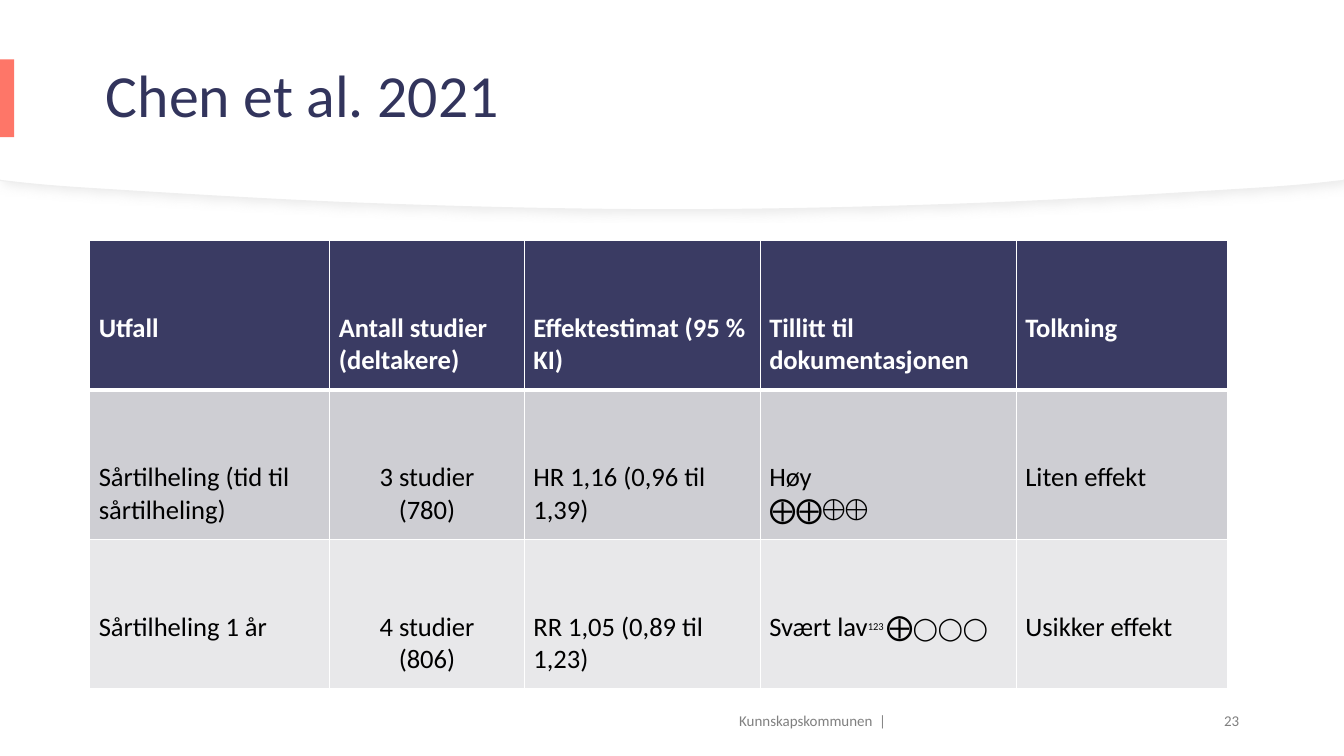
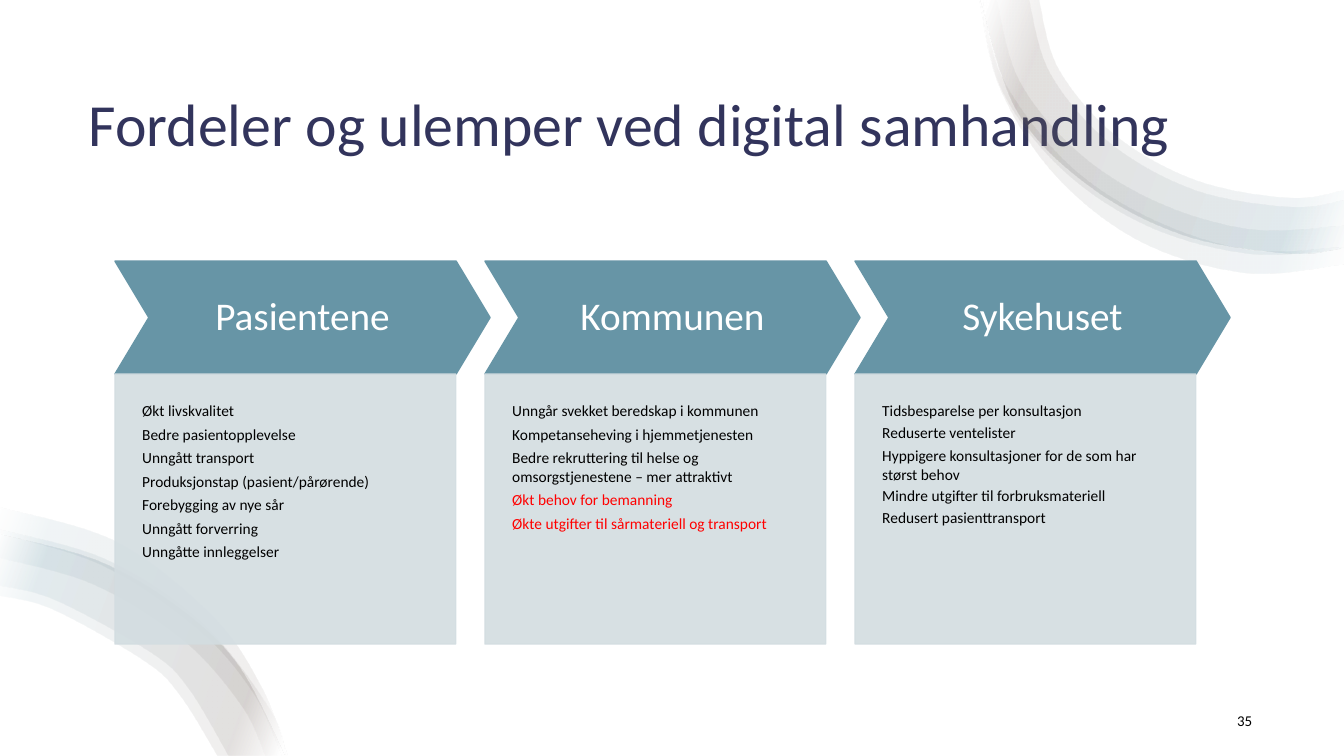
from dataclasses import dataclass
from lxml import etree
from pptx import Presentation
from pptx.dml.color import RGBColor
from pptx.enum.shapes import MSO_SHAPE as SHAPE
from pptx.enum.text import MSO_ANCHOR as ANCHOR, PP_ALIGN as ALIGN
from pptx.oxml import parse_xml
from pptx.oxml.ns import nsdecls, qn
from pptx.util import Inches, Pt


@dataclass(frozen=True)
class Theme:
    font: str = "Calibri"
    symbol_font: str = "Cambria"
    title: str = "32345C"
    accent: str = "FE7668"
    white: str = "FFFFFF"
    black: str = "000000"
    red: str = "FF0000"
    footer: str = "808080"
    wave_line: str = "EFEFEF"
    wave_shadow: str = "D9D9D9"
    header: str = "3A3B63"
    rows: tuple = ("CECED3", "E8E8EA")
    teal: str = "6795A6"
    panel: str = "D3DDE1"
    brown: str = "6C5D56"
    title_pt: float = 42.7
    heading_pt: float = 28
    table_pt: float = 19
    note_pt: float = 13
    circle_pt: float = 16
    body_pt: float = 11
    footer_pt: float = 10.7


T = Theme()
W, H = 13.33, 7.5


# ---- Shared helpers ----
def rgb(code):
    return RGBColor.from_string(code)


def write(box, paras, size, color=T.black, bold=False, align=ALIGN.LEFT,
          anchor=ANCHOR.TOP, ins=(0, 0, 0, 0), spacing=None, after=0):
    """Fill a text frame or cell; a paragraph is a string or a list of (text, overrides)."""
    tf = getattr(box, "text_frame", box)
    box.margin_left, box.margin_top, box.margin_right, box.margin_bottom = map(Inches, ins)
    box.vertical_anchor = anchor
    tf.word_wrap = True
    for i, para in enumerate(paras):
        p = tf.paragraphs[0] if i == 0 else tf.add_paragraph()
        p.alignment = align
        p.space_before, p.space_after = Pt(0), Pt(after)
        if spacing:
            p.line_spacing = spacing
        for text, fmt in [(para, {})] if isinstance(para, str) else para:
            r = p.add_run()
            r.text = text
            r.font.name = fmt.get("font", T.font)
            r.font.size = Pt(fmt.get("size", size))
            r.font.bold = bold
            r.font.color.rgb = rgb(fmt.get("color", color))
            if "spacing" in fmt:
                p.line_spacing = fmt["spacing"]
            if "raised" in fmt:
                r.font._element.set("baseline", str(fmt["raised"] * 1000))


def add_text(s, box, text, size, **fmt):
    tb = s.shapes.add_textbox(*map(Inches, box))
    write(tb.text_frame, [text], size, anchor=ANCHOR.MIDDLE, **fmt)


def paint(sp, fill, line=None, width=1):
    sp.shadow.inherit = False
    sp.fill.solid()
    sp.fill.fore_color.rgb = rgb(fill)
    if line:
        sp.line.color.rgb = rgb(line)
        sp.line.width = Pt(width)
    else:
        sp.line.fill.background()


def add_block(s, kind, box, fill, line=None):
    sp = s.shapes.add_shape(kind, *map(Inches, box))
    paint(sp, fill, line)
    return sp


def add_title(s, box, text, ins):
    add_text(s, box, text, T.title_pt, color=T.title, spacing=0.9, ins=ins)


def add_number(s, text, color, side):
    add_text(s, (9.42, 6.95, 3, 0.4), text, T.footer_pt, color=color,
             align=ALIGN.RIGHT, ins=(side, 0.05, side, 0.05))


def bezier_controls(pts):
    """Control point pairs of a smooth curve through pts (Catmull-Rom)."""
    padded = [pts[0], *pts, pts[-1]]
    return [([q + (r - p) / 6 for p, q, r in zip(a, b, c)],
             [r - (u - q) / 6 for q, r, u in zip(b, c, d)])
            for a, b, c, d in zip(padded, padded[1:], padded[2:], padded[3:])]


def add_outline(s, *edges):
    """Closed outline of smooth edges, joined by straight lines."""
    corners = [(Inches(x), Inches(y)) for edge in edges for x, y in edge]
    builder = s.shapes.build_freeform(*corners[0], scale=1.0)
    builder.add_line_segments(corners[1:], close=True)
    sp = builder.convert_to_shape()
    controls = []
    for edge in edges:
        controls += bezier_controls(edge) + [()]
    for segment, pair in zip(list(sp._element.iter(qn("a:lnTo"))), controls):
        if pair:
            segment.tag = qn("a:cubicBezTo")
        for i, (x, y) in enumerate(pair):
            pt = etree.Element(qn("a:pt"), x=str(Inches(x) - sp.left), y=str(Inches(y) - sp.top))
            segment.insert(i, pt)
    return sp


# ---- Table slide ----
def add_wave(s):
    left = [(0, 1.79), (0.91, 1.87), (3.69, 2.02)]
    edge = left + [(W / 2, 2.08)] + [(W - x, y) for x, y in reversed(left)]
    for lift, line in ((0, T.wave_line), (0.01, None)):
        sp = add_outline(s, [(W, 0), (0, 0)], [(x, y - lift) for x, y in edge])
        paint(sp, T.white, line, 0.75)
        if line:
            effects = sp._element.spPr.find(qn("a:effectLst"))
            effects.append(parse_xml(
                f'<a:outerShdw {nsdecls("a")} blurRad="{Pt(7)}" dist="{Pt(3)}" '
                f'dir="2700000" rotWithShape="0"><a:srgbClr val="{T.wave_shadow}">'
                '<a:alpha val="50000"/></a:srgbClr></a:outerShdw>'))


def set_borders(cell, **widths):
    tcPr = cell._tc.get_or_add_tcPr()
    for side in "LRTB":
        tcPr.append(parse_xml(
            f'<a:ln{side} {nsdecls("a")} w="{Pt(widths.get(side, 0.75))}"><a:solidFill>'
            f'<a:srgbClr val="{T.white}"/></a:solidFill></a:ln{side}>'))


def add_results(s, box, widths, rows):
    table = s.shapes.add_table(len(rows), len(widths), *map(Inches, box)).table
    for col, width in zip(table.columns, widths):
        col.width = Inches(width)
    for i, row in enumerate(rows):
        table.rows[i].height = Inches(box[3] / len(rows))
        for j, paras in enumerate(row):
            cell = table.cell(i, j)
            head = i == 0
            set_borders(cell, **({"B": 3} if head else {"T": 3} if i == 1 else {}))
            cell.fill.solid()
            cell.fill.fore_color.rgb = rgb(T.header if head else T.rows[i - 1])
            write(cell, paras, T.table_pt, color=T.white if head else T.black, bold=head,
                  align=ALIGN.CENTER if j == 1 and not head else ALIGN.LEFT,
                  ins=(0.09, 0.71, 0.09, 0.05))


RESULTS = [
    [["Utfall"], ["Antall studier (deltakere)"], ["Effektestimat (95 % KI)"],
     ["Tillitt til dokumentasjonen"], ["Tolkning"]],
    [["Sårtilheling (tid til sårtilheling)"], ["3 studier", "(780)"],
     ["HR 1,16 (0,96 til 1,39)"],
     ["Høy", [("⨁⨁", {}), ("⨁⨁", {"font": T.symbol_font})]],
     ["Liten effekt"]],
    [["Sårtilheling 1 år"], ["4 studier", "(806)"], ["RR 1,05 (0,89 til 1,23)"],
     [[("Svært lav", {}), ("123 ", {"size": T.note_pt, "raised": 30}),
       ("⨁", {}), ("◯◯◯", {"size": T.circle_pt})]],
     ["Usikker effekt"]],
]


def table_slide(s):
    ins = (0.13, 0.07, 0.13, 0.07)
    add_wave(s)
    add_title(s, (0.92, 0.28, 11.5, 1.39), "Chen et al. 2021", ins)
    add_block(s, SHAPE.RECTANGLE, (0, 0.59, 0.14, 0.77), T.accent)
    add_text(s, (4.42, 6.95, 4.5, 0.4), "Kunnskapskommunen  |", T.footer_pt,
             color=T.footer, align=ALIGN.RIGHT, ins=ins)
    add_number(s, "23", T.footer, 0.13)
    add_results(s, (0.89, 2.39, 11.27, 4.44), (2.38, 1.93, 2.34, 2.54, 2.09), RESULTS)


# ---- Column slide ----
TOP_EDGE = [(9.73, 0), (10.09, 1.1), (10.8, 1.84), (11.74, 2.33), (12.79, 2.51), (W, 2.45)]
LOW_EDGE = [(0, 5.3), (0.96, 5.56), (1.73, 6), (2.35, 6.59), (2.82, H)]
# Each ring: gradient angle, then (outer edge, inner edge) of its bands
RINGS = [
    (20, [
        (TOP_EDGE, [(10.31, 0), (10.5, 0.68), (11.06, 1.34), (11.87, 1.79),
                    (12.79, 1.96), (W, 1.88)]),
        (TOP_EDGE, [(10.21, 0), (10.42, 0.73), (11, 1.41), (11.84, 1.88),
                    (12.79, 2.05), (W, 1.98)]),
        ([(9.73, 0), (9.94, 0.89), (10.54, 1.68), (11.39, 2.24), (12.39, 2.51), (W, 2.46)],
         [(9.89, 0), (10.12, 0.81), (10.71, 1.52), (11.5, 2.01), (12.42, 2.27), (W, 2.23)]),
        ([(9.71, 0), (9.91, 0.87), (10.46, 1.74), (11.31, 2.4), (12.36, 2.71), (W, 2.62)],
         [(9.74, 0), (9.94, 0.78), (10.59, 1.63), (11.43, 2.18), (12.39, 2.48), (W, 2.45)]),
    ]),
    (200, [
        ([(0, 5.04), (1.15, 5.38), (2.1, 6.11), (2.59, 6.82), (2.85, H)],
         [(0, 5.3), (1.02, 5.62), (1.95, 6.24), (2.5, 6.87), (2.79, H)]),
        (LOW_EDGE, [(0, 5.91), (0.53, 6.05), (1.43, 6.56), (1.78, 6.9), (2.15, H)]),
        ([(0, 5.26), (1.06, 5.56), (2, 6.18), (2.68, 7.05), (2.83, H)],
         [(0, 5.54), (0.94, 5.81), (1.82, 6.36), (2.39, 7), (2.63, H)]),
        (LOW_EDGE, [(0, 5.81), (0.56, 5.96), (1.5, 6.48), (1.87, 6.84), (2.26, H)]),
    ]),
]


def add_ring(s, angle, bands):
    stops = "".join(
        f'<a:gs pos="{pos}000"><a:srgbClr val="{c}"><a:alpha val="10000"/></a:srgbClr></a:gs>'
        for pos, c in ((2, T.white), (16, T.brown), (85, T.teal), (100, T.white)))
    for outer, inner in bands:
        sp = add_outline(s, outer, inner[::-1])
        paint(sp, T.white)
        solid = sp._element.spPr.find(qn("a:solidFill"))
        solid.getparent().replace(solid, parse_xml(
            f'<a:gradFill {nsdecls("a")} rotWithShape="1"><a:gsLst>{stops}</a:gsLst>'
            f'<a:lin ang="{angle * 60000}" scaled="0"/></a:gradFill>'))


def add_column(s, x, y, heading, items):
    # Heading arrow
    arrow = add_block(s, SHAPE.CHEVRON, (x, y, 3.72, 1.12), T.teal, T.teal)
    arrow.adjustments[0] = 0.3
    write(arrow.text_frame, [heading], T.heading_pt, color=T.white, align=ALIGN.CENTER,
          anchor=ANCHOR.MIDDLE, spacing=0.9, ins=(0.14,) * 4)
    # Body panel, slightly transparent
    panel = add_block(s, SHAPE.RECTANGLE, (x, y + 1.12, 3.38, 2.68), T.panel, T.panel)
    for clr in panel._element.spPr.iter(qn("a:srgbClr")):
        etree.SubElement(clr, qn("a:alpha")).set("val", "90000")
    write(panel.text_frame, items, T.body_pt, after=3.6, ins=(0.27, 0.27, 0.27, 0.53))


def marked(text, **fmt):
    return [(text, fmt)]


COLUMNS = [
    ("Pasientene", [
        "Økt livskvalitet", "Bedre pasientopplevelse", "Unngått transport",
        "Produksjonstap (pasient/pårørende)", "Forebygging av nye sår",
        "Unngått forverring", "Unngåtte innleggelser"]),
    ("Kommunen", [
        "Unngår svekket beredskap i kommunen", "Kompetanseheving i hjemmetjenesten",
        "Bedre rekruttering til helse og omsorgstjenestene – mer attraktivt",
        marked("Økt behov for bemanning", color=T.red),
        marked("Økte utgifter til sårmateriell og transport", color=T.red)]),
    ("Sykehuset", [
        "Tidsbesparelse per konsultasjon",
        marked("Reduserte ventelister", spacing=0.9),
        "Hyppigere konsultasjoner for de som har størst behov",
        marked("Mindre utgifter til forbruksmateriell", spacing=0.9),
        marked("Redusert pasienttransport", spacing=0.9)]),
]


def column_slide(s):
    add_title(s, (0.88, 0.5, 11.55, 1.53), "Fordeler og ulemper ved digital samhandling",
              (0, 0.05, 0.1, 0.05))
    for angle, bands in RINGS:
        add_ring(s, angle, bands)
    add_number(s, "35", T.black, 0)
    for i, (heading, items) in enumerate(COLUMNS):
        add_column(s, 1.14 + i * 3.67, 2.59, heading, items)


def main():
    prs = Presentation()
    prs.slide_width, prs.slide_height = Inches(W), Inches(H)
    for fill_slide in (table_slide, column_slide):
        fill_slide(prs.slides.add_slide(prs.slide_layouts[6]))
    prs.save("out.pptx")


if __name__ == "__main__":
    main()
